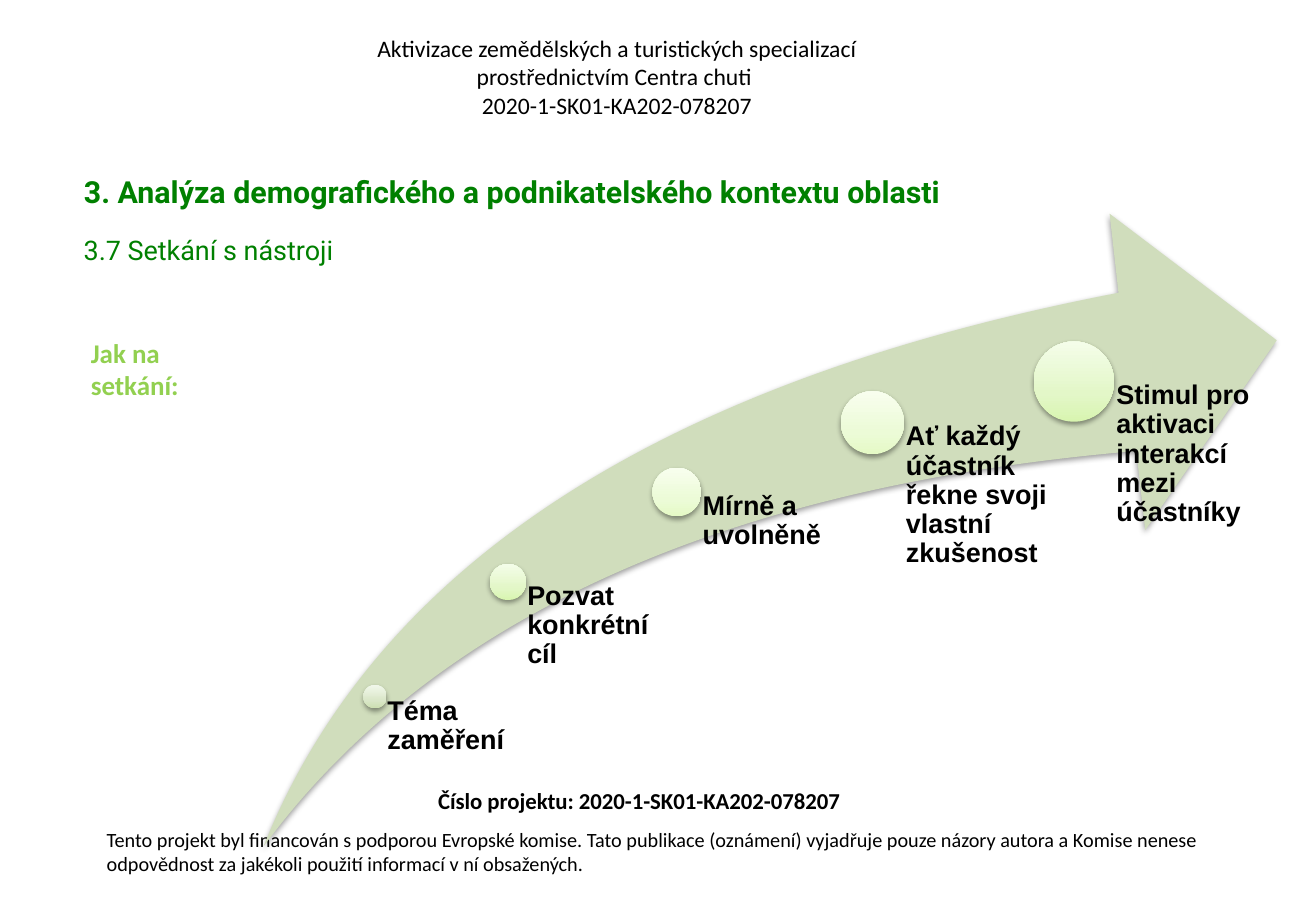
from copy import deepcopy
from lxml import etree
from pptx import Presentation
from pptx import util as u
from pptx.dml.color import RGBColor
from pptx.enum import shapes, text
from pptx.oxml.ns import qn


class Theme:
    body, head, label = "Calibri", "Roboto", "Arial"
    black, green, lime, sage = "000000", "008000", "92D050", "D0DDBC"
    dull = ("CCDFB1", "DAE7C9", "F1F7EA")
    fresh = ("D8F5B0", "E3F7C8", "F4FDE9")
    pale = ("E5FAC6", "ECFBD7", "F8FEEE")
    stops = (0, 0.35, 1)
    note, foot, top, mid, title = 12, 13.5, 14, 16, 18


class Page:
    def __init__(self, deck, theme):
        self.theme = theme
        self.slide = deck.slides.add_slide(deck.slide_layouts[5])

    def style(self, box, words, size, face, color=Theme.black, bold=False,
              align=text.PP_ALIGN.LEFT):
        frame = box.text_frame
        frame.word_wrap = True
        frame.auto_size = text.MSO_AUTO_SIZE.NONE
        frame.vertical_anchor = text.MSO_ANCHOR.TOP
        frame.text = words
        para = frame.paragraphs[0]
        para.alignment = align
        para.font.size = u.Pt(size)
        para.font.name = face
        para.font.bold = bold
        para.font.color.rgb = RGBColor.from_string(color)
        return frame

    def title(self, place, words):
        box = self.slide.shapes.title
        box.left, box.top, box.width, box.height = map(u.Cm, place)
        self.style(box, words, self.theme.title, self.theme.head,
                   self.theme.green, True)

    def text(self, place, words, *looks, **more):
        box = self.slide.shapes.add_textbox(*map(u.Cm, place))
        return self.style(box, words, *looks, **more)

    def shape(self, kind, place):
        item = self.slide.shapes.add_shape(kind, *map(u.Cm, place))
        item.line.fill.background()
        # Soft shadow straight below
        item.shadow.inherit = False
        effects = item._element.spPr.find(qn("a:effectLst"))
        shade = etree.SubElement(effects, qn("a:outerShdw"), blurRad="39370",
                                 dist="20320", dir="5400000", rotWithShape="0")
        tint = etree.SubElement(shade, qn("a:srgbClr"), val=self.theme.black)
        etree.SubElement(tint, qn("a:alpha"), val="38000")
        return item

    def arrow(self, place):
        item = self.shape(shapes.MSO_SHAPE.SWOOSH_ARROW, place)
        item.adjustments[0] = item.adjustments[1] = 0.25
        item.fill.solid()
        item.fill.fore_color.rgb = RGBColor.from_string(self.theme.sage)

    def dot(self, x, y, size, colors):
        item = self.shape(shapes.MSO_SHAPE.OVAL,
                          (x - size / 2, y - size / 2, size, size))
        fill = item.fill
        fill.gradient()
        fill.gradient_angle = 90
        # Add a third stop to the default pair
        ramp = item._element.spPr.find(".//" + qn("a:gsLst"))
        ramp.insert(1, deepcopy(ramp[0]))
        for stop, spot, color in zip(fill.gradient_stops, self.theme.stops, colors):
            stop.position = spot
            stop.color.rgb = RGBColor.from_string(color)

    def step(self, x, y, size, width, end, colors, words):
        self.dot(x, y, size, colors)
        # The label hangs from the dot's centre, indented past its edge
        frame = self.text((x, y, width, end - y), words, self.theme.mid,
                          self.theme.label, bold=True)
        frame.margin_left = u.Cm(0.53 * size)
        frame.margin_top = frame.margin_right = frame.margin_bottom = 0
        frame.paragraphs[0].line_spacing = 0.9


def main():
    deck = Presentation()
    deck.slide_width, deck.slide_height = u.Cm(27.51), u.Cm(19.05)
    look = Theme()
    page = Page(deck, look)
    center = text.PP_ALIGN.CENTER

    # Footer and header
    page.text((7.01, 16.33, 12.7, 0.84), "Číslo projektu: 2020-1-SK01-KA202-078207",
              look.foot, look.body, bold=True, align=center)
    page.text((1.98, 17.17, 23.52, 1.27),
              "Tento projekt byl financován s podporou Evropské komise. "
              "Tato publikace (oznámení) vyjadřuje pouze názory autora a Komise "
              "nenese odpovědnost za jakékoli použití informací v ní obsažených.",
              look.note, look.body)
    page.text((6.55, 0.58, 12.7, 2.06),
              "Aktivizace zemědělských a turistických specializací "
              "prostřednictvím Centra chuti \v2020-1-SK01-KA202-078207",
              look.top, look.body, align=center)

    # Headings
    page.title((1.5, 3.5, 24.5, 1),
               "3. Analýza demografického a podnikatelského kontextu oblasti")
    page.text((1.5, 4.75, 24.5, 1), "3.7 Setkání s nástroji",
              look.mid, look.head, look.green)
    page.text((1.65, 6.91, 3.15, 3.68), "Jak na setkání:",
              look.mid, look.body, look.lime, True)

    # Rising arrow with its steps
    left, top, width, height = 5.51, 4.47, 21.18, 13.23
    page.arrow((left, top, width, height))
    steps = (
        (7.84, 14.57, 0.49, 2.77, look.dull, "Téma zaměření"),
        (10.62, 12.17, 0.76, 3.51, look.fresh, "Pozvat konkrétní cíl"),
        (14.15, 10.29, 1.02, 4.09, look.pale, "Mírně a uvolněně"),
        (18.24, 8.84, 1.32, 4.24, look.pale,
         "Ať každý účastník řekne svoji vlastní zkušenost"),
        (22.45, 7.98, 1.68, 4.24, look.fresh,
         "Stimul pro aktivaci interakcí mezi účastníky"),
    )
    for x, y, size, wide, colors, words in steps:
        page.step(x, y, size, wide, top + height, colors, words)

    deck.save("out.pptx")


if __name__ == "__main__":
    main()
